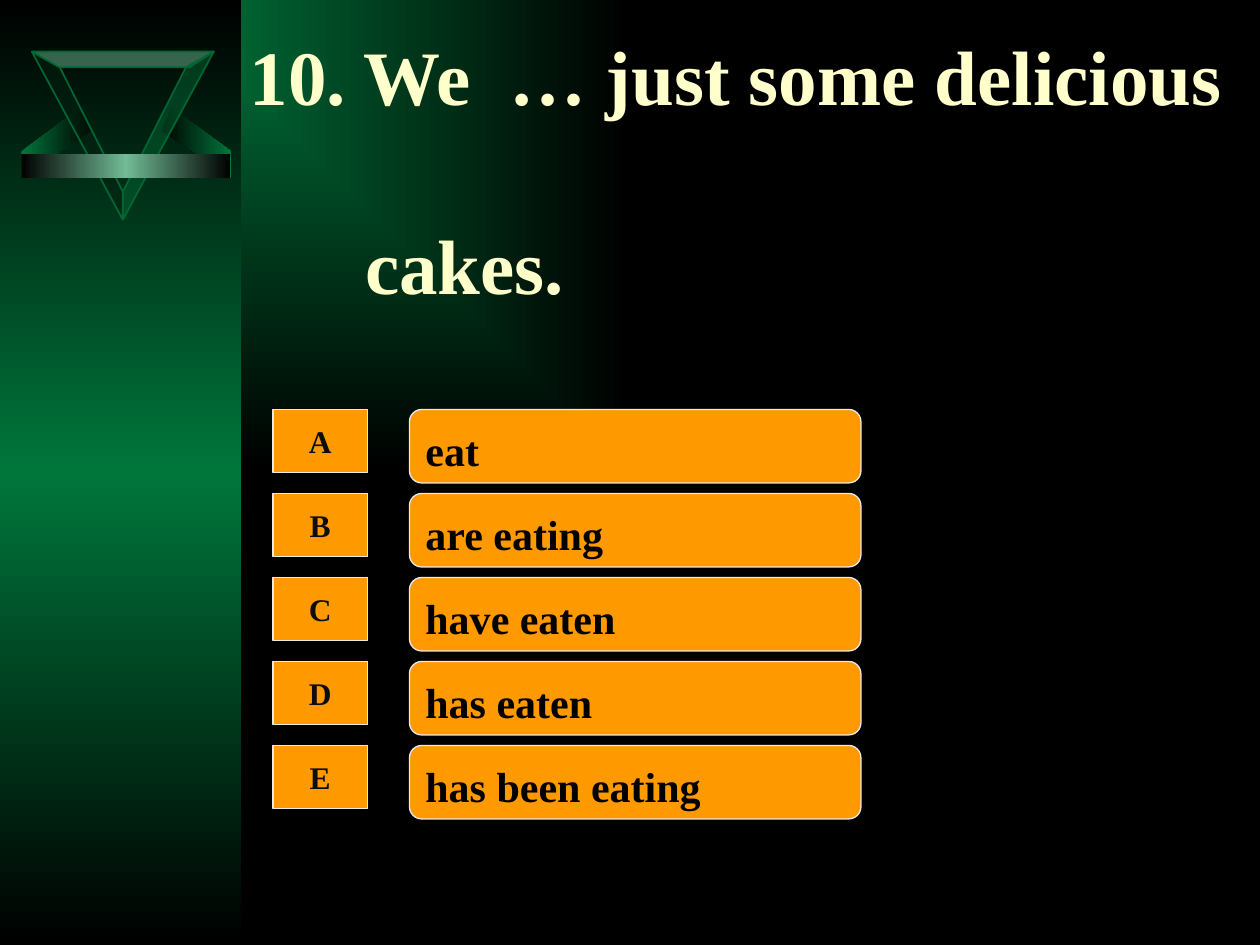
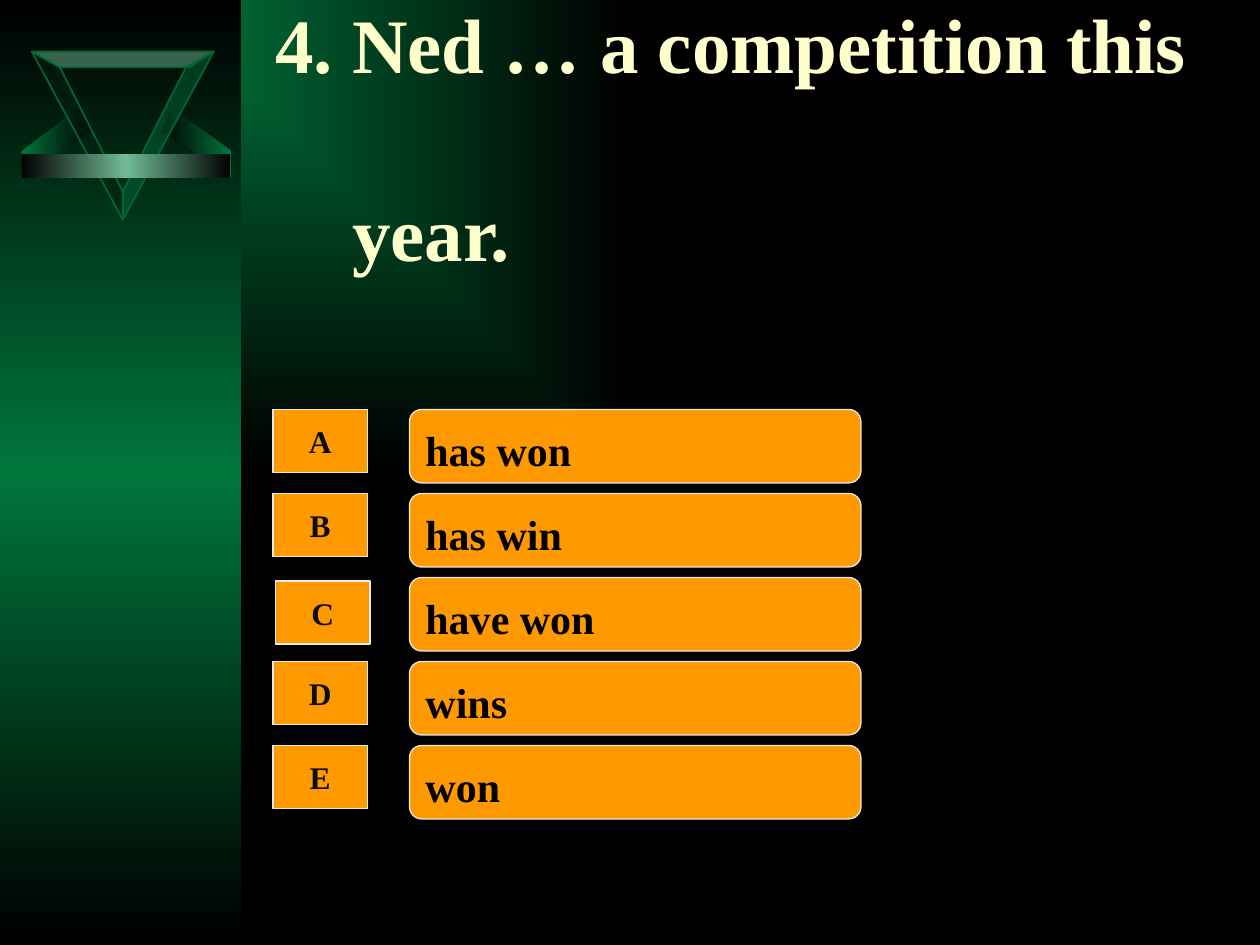
from pptx import Presentation
from pptx.dml.color import RGBColor
from pptx.enum.shapes import MSO_SHAPE as Shape
from pptx.enum.text import MSO_ANCHOR as Anchor, MSO_AUTO_SIZE as AutoSize, PP_ALIGN as Align
from pptx.oxml import parse_xml
from pptx.oxml.ns import nsdecls, qn
from pptx.util import Pt

COLORS = {
    "black": "000000", "green": "00763B", "edge": "006633", "deep": "002010",
    "mint": "71BB96", "cream": "FFFFCC", "orange": "FF9900", "outline": "EAEAEA",
    "letter": "0D0D0D",
}
FONT = "Times New Roman"
HORIZONTAL = '<a:lin {} ang="0" scaled="0"/>'
VERTICAL = '<a:lin {} ang="5400000" scaled="0"/>'
FROM_CORNER = '<a:path {} path="rect"><a:fillToRect l="0" t="0" r="100000" b="100000"/></a:path>'

EMBLEM_BOX = (12.24, 29.5, 119.5, 96.5)
ANSWERS_BOX = (156, 234, 336, 234)
ROW_PITCH = 48

QUESTIONS = [
    {
        "box": (135.5, 36.75, 584.5, 113.75),
        "lines": ["10. We", "… just some delicious", "cakes."],
        "indent": 66,
        "answers": ["eat", "are eating", "have eaten", "has eaten", "has been eating"],
        "nudges": {},
    },
    {
        "box": (150, 18, 558, 113.75),
        "lines": ["4. Ned … a competition this", "year."],
        "indent": 44,
        "answers": ["has won", "has win", "have won", "wins", "won"],
        "nudges": {"C": (1.5, 2)},
    },
]


def rgb(color):
    return RGBColor.from_string(COLORS[color])


def fill_gradient(fill, owner, colors, direction):
    fill.gradient()
    gradient = next(owner.iter(qn("a:gradFill")))
    for part in list(gradient):
        gradient.remove(part)
    stops = "".join(
        f'<a:gs pos="{100000 * i // (len(colors) - 1)}"><a:srgbClr val="{COLORS[c]}"/></a:gs>'
        for i, c in enumerate(colors))
    gradient.append(parse_xml(f'<a:gsLst {nsdecls("a")}>{stops}</a:gsLst>'))
    gradient.append(parse_xml(direction.format(nsdecls("a"))))


def add_box(shapes, kind, left, top, width, height):
    box = shapes.add_shape(kind, Pt(left), Pt(top), Pt(width), Pt(height))
    box.shadow.inherit = False
    return box


def add_gradient_bar(shapes, box, colors, direction):
    bar = add_box(shapes, Shape.RECTANGLE, *box)
    fill_gradient(bar.fill, bar.element, colors, direction)
    bar.line.fill.background()


def add_outline(shapes, box, points):
    builder = shapes.build_freeform(*points[0], scale=Pt(1))
    builder.add_line_segments(points[1:], close=True)
    outline = builder.convert_to_shape(Pt(box[0]), Pt(box[1]))
    outline.shadow.inherit = False
    return outline


def mirror(points, span):
    return [(span - x, y) for x, y in points]


def add_emblem(shapes, box):
    left, top, width, _ = box
    left_fin = [(0, 57), (0, 72), (39.6, 44.6), (39.6, 46), (33.8, 32.4)]
    left_side = [(58.2, 96.5), (58.2, 80), (22.3, 9.4), (6.5, 0)]
    lid = [(6.5, 0), (22.3, 9.4), (95.8, 9.4), (109.5, 0)]

    for points, colors in [(mirror(left_fin, width), ("black", "green")),
                           (left_fin, ("green", "black"))]:
        fin = add_outline(shapes, box, points)
        fill_gradient(fin.fill, fin.element, colors, HORIZONTAL)
        fin.line.fill.background()

    for points, color in [(left_side, "deep"), (lid, "mint"),
                          (mirror(left_side, 116.2), "edge")]:
        face = add_outline(shapes, box, points)
        face.fill.solid()
        face.fill.fore_color.rgb = rgb(color)
        tint = next(face.element.iter(qn("a:srgbClr")))
        tint.append(parse_xml(f'<a:alpha {nsdecls("a")} val="50000"/>'))
        face.line.color.rgb = rgb("edge")
        face.line.width = Pt(1)

    add_gradient_bar(shapes, (left, top + 58.3, width, 13.7),
                     ("black", "mint", "black"), HORIZONTAL)


def decorate_layout(layout, slide):
    fill_gradient(layout.background.fill, layout.element, ("green", "black"), FROM_CORNER)
    decoration = slide.shapes.add_group_shape()
    add_gradient_bar(decoration.shapes, (0, 0, 138, 540),
                     ("black", "green", "black"), VERTICAL)
    add_emblem(decoration.shapes, EMBLEM_BOX)
    for number, identity in enumerate(decoration.element.iter(qn("p:cNvPr")), 100):
        identity.set("id", str(number))
    layout.shapes.element.append(decoration.element)


def add_run(paragraph, text, size, color):
    run = paragraph.add_run()
    run.text = text
    run.font.name = FONT
    run.font.size = Pt(size)
    run.font.bold = True
    run.font.color.rgb = rgb(color)
    return run


def format_question(title, box, lines, indent):
    title.left, title.top, title.width, title.height = map(Pt, box)
    frame = title.text_frame
    frame.auto_size = AutoSize.NONE
    frame.word_wrap = True
    frame.vertical_anchor = Anchor.MIDDLE
    frame.margin_top = Pt(10)
    *opening, ending = lines
    first = frame.paragraphs[0]
    for number, part in enumerate(opening):
        if number:
            blank = add_run(first, " ", 44, "cream")
            blank.font.element.set("spc", "1100") if hasattr(blank.font, "element") else \
                next(first.runs[-1]._r.iter(qn("a:rPr"))).set("spc", "1100")
        add_run(first, part, 44, "cream")
    second = frame.add_paragraph()
    second.space_before = Pt(55)
    second._p.get_or_add_pPr().set("marL", str(Pt(indent)))
    add_run(second, ending, 44, "cream")
    for paragraph in frame.paragraphs:
        paragraph.alignment = Align.LEFT
        paragraph.line_spacing = 1.0


def add_option(shapes, kind, box, text, size, color, alignment):
    option = add_box(shapes, kind, *box)
    option.fill.solid()
    option.fill.fore_color.rgb = rgb("orange")
    option.line.color.rgb = rgb("outline")
    option.line.width = Pt(0.75)
    frame = option.text_frame
    frame.word_wrap = True
    frame.vertical_anchor = Anchor.MIDDLE
    frame.paragraphs[0].alignment = alignment
    add_run(frame.paragraphs[0], text, size, color)
    return option


def add_answers(shapes, box, answers, nudges):
    left, top, width, _ = box
    for row, (letter, answer) in enumerate(zip("ABCDE", answers)):
        row_top = top + row * ROW_PITCH
        panel = add_option(shapes, Shape.ROUNDED_RECTANGLE,
                           (left + 78, row_top, width - 78, 42),
                           answer, 24, "black", Align.LEFT)
        panel.text_frame.margin_top = Pt(8)
        dx, dy = nudges.get(letter, (0, 0))
        add_option(shapes, Shape.ACTION_BUTTON_CUSTOM,
                   (left + dx, row_top + dy, 54, 36),
                   letter, 18, "letter", Align.CENTER)


def add_question_slide(deck, layout, question):
    slide = deck.slides.add_slide(layout)
    format_question(slide.shapes.title, question["box"], question["lines"], question["indent"])
    add_answers(slide.shapes, ANSWERS_BOX, question["answers"], question["nudges"])
    return slide


def main():
    deck = Presentation()
    deck.slide_width, deck.slide_height = Pt(720), Pt(540)
    layout = deck.slide_layouts[5]
    slides = [add_question_slide(deck, layout, question) for question in QUESTIONS]
    decorate_layout(layout, slides[0])
    deck.save("out.pptx")


if __name__ == "__main__":
    main()
